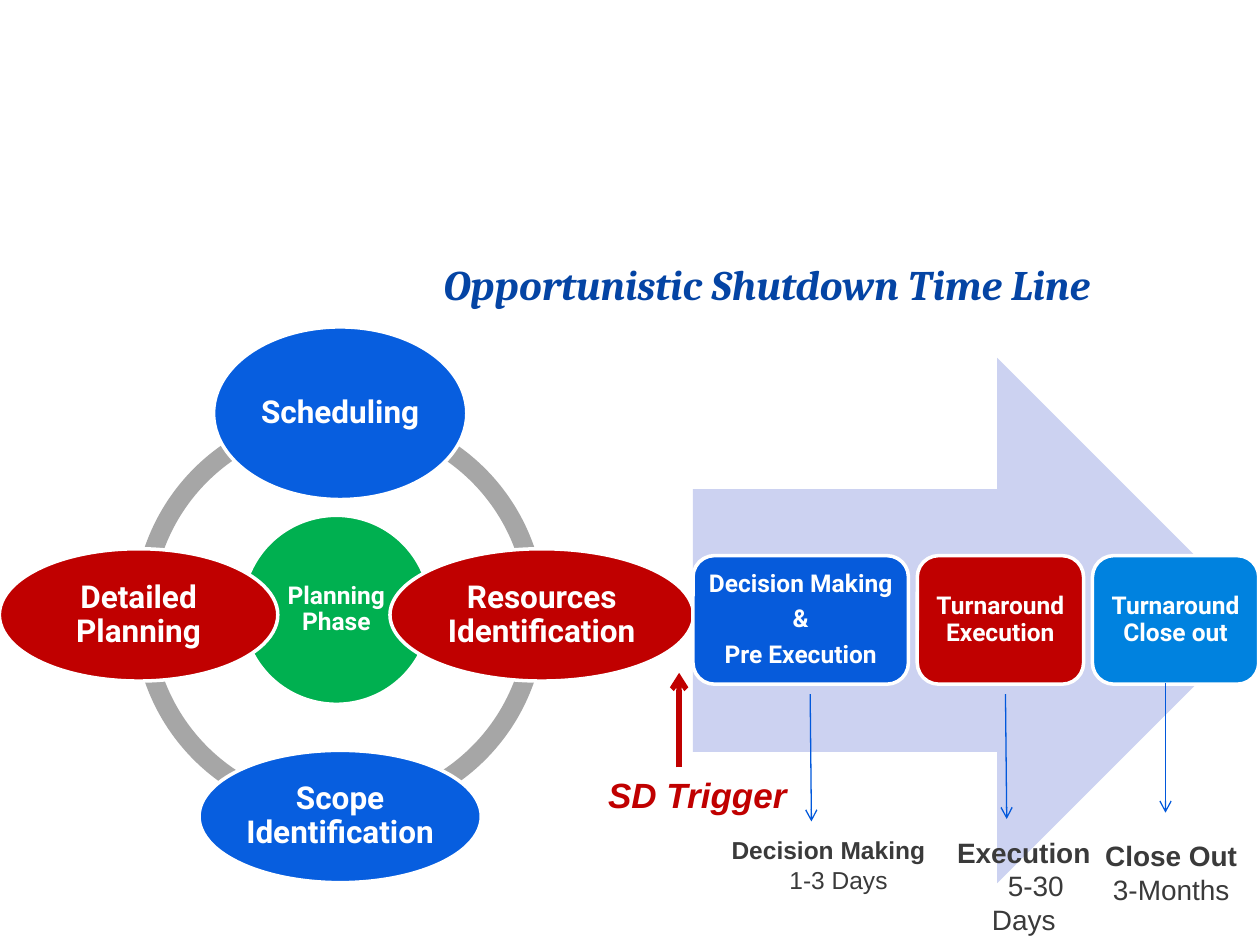
from itertools import accumulate

from pptx import Presentation
from pptx.dml.color import RGBColor
from pptx.enum.shapes import MSO_CONNECTOR, MSO_SHAPE
from pptx.enum.text import MSO_ANCHOR, MSO_AUTO_SIZE, PP_ALIGN
from pptx.oxml.ns import qn
from pptx.util import Inches, Pt

# The slide is a grid of 100 columns by 75 rows; every length is in cells.
COLUMNS, ROWS = 100, 75
CELL = Inches(0.1)

COLORS = {
    "white": "FFFFFF", "ring": "A6A6A6", "hub": "00B050", "blue": "075EDF",
    "red": "C00000", "arrow": "CCD2F1", "decision": "065BDB",
    "close": "0082DF", "line": "0158DB", "text": "3A3A3A", "title": "0444A4",
}


def cells(*values):
    return [round(value * CELL) for value in values]


def color(name):
    return RGBColor.from_string(COLORS[name])


def style(para, size, name, font="Roboto", bold=True, italic=False):
    para.font.name, para.font.size = font, Pt(size)
    para.font.bold, para.font.italic = bold, italic
    para.font.color.rgb = color(name)


def set_margins(frame, margin):
    frame.margin_left = frame.margin_right = margin
    frame.margin_top = frame.margin_bottom = margin


def add_figure(page, kind, area, fill, outlined=False):
    figure = page.shapes.add_shape(kind, *cells(*area))
    figure.shadow.inherit = False
    figure.fill.solid()
    figure.fill.fore_color.rgb = color(fill)
    if outlined:
        figure.line.color.rgb = color("white")
        figure.line.width = Pt(2)
    else:
        figure.line.fill.background()
    return figure


def add_labelled(page, kind, area, fill, lines, size, margin):
    figure = add_figure(page, kind, area, fill, outlined=True)
    frame = figure.text_frame
    frame.word_wrap = True
    frame.vertical_anchor = MSO_ANCHOR.MIDDLE
    set_margins(frame, Inches(margin))
    for index, line in enumerate(lines):
        para = frame.add_paragraph() if index else frame.paragraphs[0]
        para.text = line
        para.alignment = PP_ALIGN.CENTER
        para.line_spacing = 0.9
        if line != lines[-1]:
            para.space_after = Pt(5)
        style(para, size, "white")


def add_oval(page, center, size, fill, label, points, margin=0.03):
    (x, y), (width, height) = center, size
    area = (x - width / 2, y - height / 2, width, height)
    add_labelled(page, MSO_SHAPE.OVAL, area, fill, [label], points, margin)


def add_note(page, area, lines, size, name="text", indent=0, italic=False):
    """Centred text: a bold first line, then a plain line; the last is indented."""
    box = page.shapes.add_textbox(*cells(*area))
    frame = box.text_frame
    frame.word_wrap = True
    for index, line in enumerate(lines):
        para = frame.add_paragraph() if index else frame.paragraphs[0]
        para.text = line
        para.alignment = PP_ALIGN.CENTER
        if indent and line == lines[-1]:
            para._p.get_or_add_pPr().set("indent", str(Inches(indent)))
        style(para, size, name, "Arial", bold=index == 0, italic=italic)


def add_arrow(page, start, end, name, width):
    arrow = page.shapes.add_connector(MSO_CONNECTOR.STRAIGHT, *cells(*start, *end))
    arrow.line.color.rgb = color(name)
    arrow.line.width = Pt(width)
    line = arrow.line._get_or_add_ln()
    line.append(line.makeelement(qn("a:tailEnd"), {"type": "arrow"}))
    properties = arrow._element.spPr
    properties.append(properties.makeelement(qn("a:effectLst"), {}))


def add_title(page):
    title = page.shapes.title
    title.left, title.top, title.width, title.height = cells(34.2, 20, 65.8, 5)
    frame = title.text_frame
    frame.auto_size = MSO_AUTO_SIZE.NONE
    frame.word_wrap = True
    frame.vertical_anchor = MSO_ANCHOR.TOP
    para = frame.paragraphs[0]
    para.text = "Opportunistic Shutdown Time Line"
    para.alignment = PP_ALIGN.LEFT
    style(para, 24, "title", "Cambria", italic=True)


def add_cycle(page):
    x, y, radius = 27, 48.8, 16
    # Ring of four quarter arcs (a full turn is 216 adjustment units)
    for quarter in range(4):
        arc = add_figure(page, MSO_SHAPE.BLOCK_ARC, (10.6, 32.4, 32.7, 32.7), "ring")
        start = quarter * 54
        for index, value in enumerate((start, (start + 54) % 216, 0.046)):
            arc.adjustments[index] = value
    # Hub, then the four activities around it
    add_oval(page, (26.7, 48.4), (15, 15), "hub", "Planning Phase", 14, 0.02)
    activities = [
        (0, -1, (20.1, 13.7), "blue", "Scheduling"),
        (1, 0, (24.1, 10.5), "red", "Resources Identification"),
        (0, 1, (22.4, 10.5), "blue", "Scope Identification"),
        (-1, 0, (22.1, 10.5), "red", "Detailed Planning"),
    ]
    for across, down, size, fill, label in activities:
        center = (x + across * radius, y + down * radius)
        add_oval(page, center, size, fill, label, 18)


def add_steps(page):
    add_figure(page, MSO_SHAPE.RIGHT_ARROW, (55, 28.4, 45, 41.7), "arrow")
    gap = 0.7
    steps = [
        (17.1, "decision", ["Decision Making", "&", "Pre Execution"]),
        (13.2, "red", ["Turnaround Execution"]),
        (13.2, "close", ["Turnaround Close out"]),
    ]
    lefts = accumulate((width + gap for width, _, _ in steps), initial=55)
    for left, (width, fill, lines) in zip(lefts, steps):
        add_labelled(page, MSO_SHAPE.ROUNDED_RECTANGLE, (left, 44.1, width, 10.2),
                     fill, lines, 14, 0.06)


def add_durations(page):
    for start, end in [((64.3, 55.1), (64.4, 65.2)), ((79.8, 55.1), (79.9, 65)),
                       ((92.5, 54.2), (92.5, 64.5))]:
        add_arrow(page, start, end, "line", 0.75)
    add_note(page, (56.7, 65.8, 18.1, 5.7), ["Decision Making", "1-3 Days"], 14, indent=0.16)
    add_note(page, (74.3, 65.8, 13.9, 6.4), ["Execution", "5-30 Days"], 16, indent=0.19)
    add_note(page, (85.9, 66.1, 14.1, 6.4), ["Close Out", "3-Months"], 16)


def add_trigger(page):
    add_arrow(page, (53.9, 60.9), (53.9, 53.4), "red", 3)
    add_note(page, (40.8, 60.9, 28.3, 4.4), ["SD Trigger"], 20, "red", 0.08, italic=True)


def main():
    deck = Presentation()
    deck.slide_width, deck.slide_height = cells(COLUMNS, ROWS)
    page = deck.slides.add_slide(deck.slide_layouts[5])
    add_title(page)
    add_cycle(page)
    add_steps(page)
    add_durations(page)
    add_trigger(page)
    deck.save("out.pptx")


if __name__ == "__main__":
    main()
